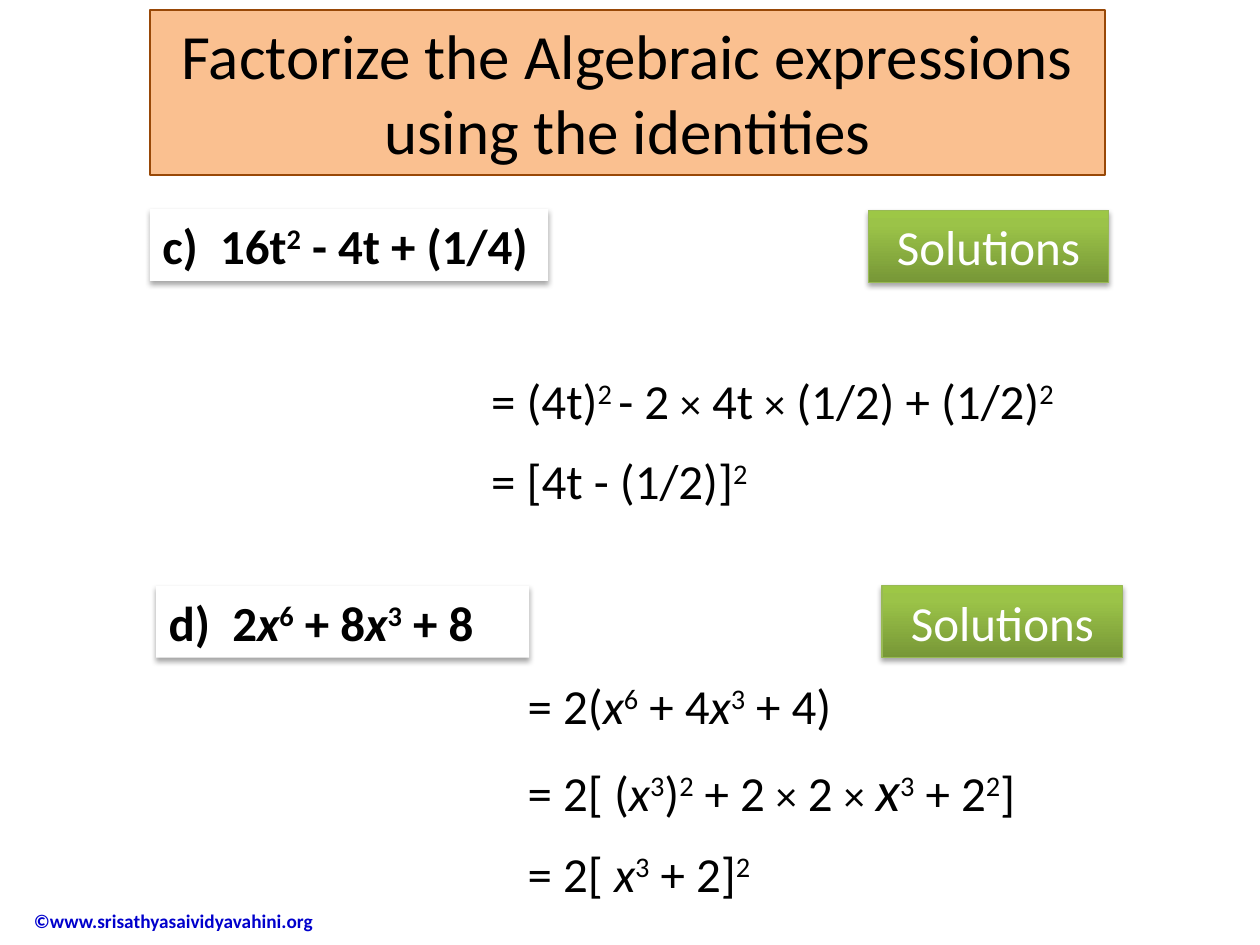
from dataclasses import dataclass

from lxml.etree import SubElement
from pptx import Presentation
from pptx.dml.color import RGBColor
from pptx.enum.shapes import MSO_SHAPE as Shape
from pptx.enum.text import MSO_ANCHOR as Anchor, MSO_AUTO_SIZE as AutoSize, PP_ALIGN as Align
from pptx.oxml.ns import qn
from pptx.util import Inches, Pt


@dataclass(frozen=True)
class Theme:
    font: str = "Calibri"
    ink: str = "000000"
    paper: str = "FFFFFF"
    banner: str = "FAC090"
    banner_edge: str = "984807"
    button_edge: str = "98B955"
    button_stops: tuple = ((0, "779737"), (80, "9BC348"), (100, "9DC746"))
    credit: str = "0000CC"
    title_size: int = 36
    body_size: int = 28
    times_size: int = 24
    large_size: int = 32
    credit_size: int = 11
    edge: float = 0.75
    gap: int = 6


@dataclass(frozen=True)
class Part:
    text: str
    size: int = 0
    italic: bool = False
    raised: bool = False


@dataclass(frozen=True)
class Box:
    column: float
    row: float
    columns: float
    rows: float

    def place(self):
        return [Inches(n * CELL) for n in (self.column, self.row, self.columns, self.rows)]


THEME = Theme()
CELL = 0.1
COLUMNS, ROWS = 100, 75
X = Part("x", italic=True)
BIG_X = Part("x", THEME.large_size, italic=True)
TIMES = Part("×", THEME.times_size)


def power(exponent):
    return Part(exponent, raised=True)


def rgb(value):
    return RGBColor.from_string(value)


def fit_text(shape, wrap, anchor=Anchor.TOP):
    frame = shape.text_frame
    frame.word_wrap = wrap
    frame.auto_size = AutoSize.SHAPE_TO_FIT_TEXT
    frame.vertical_anchor = anchor
    return frame


def add_parts(paragraph, parts, size, color, bold=False):
    for part in parts:
        if isinstance(part, str):
            part = Part(part)
        run = paragraph.add_run()
        run.text = part.text
        font = run.font
        font.name = THEME.font
        font.size = Pt(part.size or size)
        font.color.rgb = rgb(color)
        font.bold = bold
        font.italic = part.italic
        if part.raised:
            run._r.get_or_add_rPr().set("baseline", "30000")


def add_panel(slide, box, edge=None, shadow=False):
    panel = slide.shapes.add_shape(Shape.RECTANGLE, *box.place())
    if edge:
        panel.line.color.rgb = rgb(edge)
        panel.line.width = Pt(THEME.edge)
    else:
        panel.line.fill.background()
    panel.shadow.inherit = False
    if shadow:
        effects = panel._element.spPr.find(qn("a:effectLst"))
        outer = SubElement(effects, qn("a:outerShdw"), blurRad=str(Pt(3.1)),
                           dist=str(Pt(1.8)), dir="5400000", rotWithShape="0")
        tint = SubElement(outer, qn("a:srgbClr"), val=THEME.ink)
        SubElement(tint, qn("a:alpha"), val="35000")
    return panel


def add_title(slide, box, title):
    banner = add_panel(slide, box, THEME.banner_edge)
    banner.fill.solid()
    banner.fill.fore_color.rgb = rgb(THEME.banner)
    heading = fit_text(banner, True).paragraphs[0]
    heading.alignment = Align.CENTER
    add_parts(heading, [title], THEME.title_size, THEME.ink)


def add_question(slide, box, parts):
    card = add_panel(slide, box, shadow=True)
    card.fill.solid()
    card.fill.fore_color.rgb = rgb(THEME.paper)
    question = fit_text(card, False).paragraphs[0]
    question.alignment = Align.LEFT
    add_parts(question, parts, THEME.body_size, THEME.ink, bold=True)


def add_button(slide, box, label):
    button = add_panel(slide, box, THEME.button_edge, shadow=True)
    button.fill.gradient()
    button.fill.gradient_angle = 90
    stops = button._element.spPr.find(qn("a:gradFill")).find(qn("a:gsLst"))
    for stop in list(stops):
        stops.remove(stop)
    for share, color in THEME.button_stops:
        stop = SubElement(stops, qn("a:gs"), pos=str(share * 1000))
        SubElement(stop, qn("a:srgbClr"), val=color)
    caption = fit_text(button, True).paragraphs[0]
    caption.alignment = Align.CENTER
    add_parts(caption, [label], THEME.body_size, THEME.paper)


def add_steps(slide, box, steps):
    frame = fit_text(slide.shapes.add_textbox(*box.place()), False)
    for index, parts in enumerate(steps):
        step = frame.add_paragraph() if index else frame.paragraphs[0]
        step.alignment = Align.JUSTIFY
        step.space_before = Pt(THEME.gap if index else 0)
        step.space_after = Pt(THEME.gap)
        add_parts(step, parts, THEME.body_size, THEME.ink)


def add_credit(slide, box, credit):
    footer = slide.shapes.add_textbox(*box.place())
    frame = fit_text(footer, True, Anchor.MIDDLE)
    frame.auto_size = AutoSize.NONE
    line = frame.paragraphs[0]
    line._p.get_or_add_pPr().set("marL", str(Inches(0.5)))
    add_parts(line, [credit], THEME.credit_size, THEME.credit, bold=True)


def main():
    deck = Presentation()
    deck.slide_width = Inches(COLUMNS * CELL)
    deck.slide_height = Inches(ROWS * CELL)
    slide = deck.slides.add_slide(deck.slide_layouts[6])

    add_credit(slide, Box(-3.3, 71, 30.2, 4.1), "©www.srisathyasaividyavahini.org")
    add_question(slide, Box(11.9, 16.6, 31.6, 5.7),
                 ["c)  16t", power("2"), " - 4t + (1/4)"])
    add_question(slide, Box(12.4, 46.5, 29.6, 5.7),
                 ["d)  2", X, power("6"), " + 8", X, power("3"), " + 8  "])
    add_steps(slide, Box(38, 28.9, 49.2, 12.1), [
        ["= (4t)", power("2 "), "- 2 ", TIMES, " 4t ", TIMES, " (1/2) + (1/2)", power("2 ")],
        ["= [4t - (1/2)]", power("2")],
    ])
    add_steps(slide, Box(40.9, 53.1, 43.4, 19.2), [
        ["= 2(", X, power("6"), " + 4", X, power("3"), " + 4) "],
        ["= 2[ (", X, power("3"), ")", power("2"), " + 2 ", TIMES, " 2 ", TIMES, " ",
         BIG_X, power("3"), " + 2", power("2"), "] "],
        ["= 2[ ", X, power("3"), " + 2]", power("2 ")],
    ])
    for column, row in ((68.9, 16.7), (70, 46.5)):
        add_button(slide, Box(column, row, 19.1, 5.7), "Solutions")
    add_title(slide, Box(11.9, 0.8, 75.8, 13.1),
              "Factorize the Algebraic expressions using the identities")

    deck.save("out.pptx")


if __name__ == "__main__":
    main()
